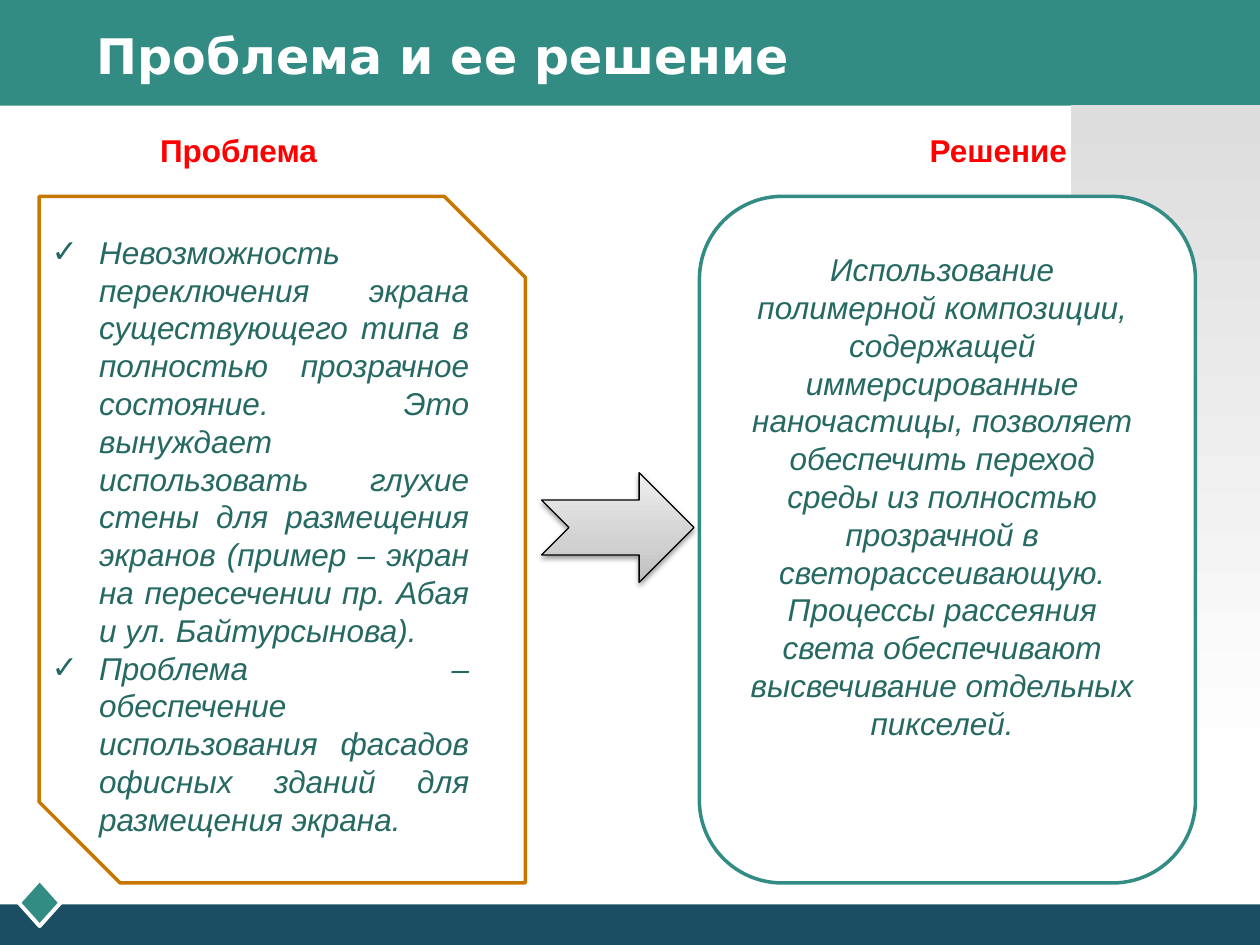
from dataclasses import dataclass

from lxml.etree import SubElement as Sub
from pptx import Presentation
from pptx.dml.color import RGBColor as RGB
from pptx.enum.shapes import MSO_SHAPE as Kind
from pptx.enum.text import MSO_ANCHOR as Anchor, PP_ALIGN as Align
from pptx.oxml.ns import qn
from pptx.util import Cm, Pt


@dataclass(frozen=True)
class Theme:
    teal: str = "328C83"
    navy: str = "1B4E63"
    ink: str = "256962"
    amber: str = "C77600"
    red: str = "FF0000"
    white: str = "FFFFFF"
    black: str = "000000"
    fade: tuple = ((0, "DDDDDD"), (100, "FFFFFF"))
    steel: tuple = ((0, "BDBDBD"), (35, "D1D1D1"), (100, "EEEEEE"))
    font: str = "Arial"
    head: str = "DejaVu Sans"
    big: int = 28
    body: int = 18


def write(par, text, size, color, font, bold=False, slant=False, align=None):
    """Put one formatted run into a paragraph."""
    par.alignment = align
    run = par.add_run()
    run.text = text
    face = run.font
    face.size, face.name = Pt(size), font
    face.bold, face.italic = bold, slant
    face.color.rgb = RGB.from_string(color)


class Deck:
    def __init__(self, theme):
        self.theme = theme
        self.file = Presentation()
        self.file.slide_width, self.file.slide_height = Cm(25.4), Cm(19.05)
        self.slide = self.file.slides.add_slide(self.file.slide_layouts[6])

    def shape(self, kind, box, fill, line=None, width=2):
        item = self.slide.shapes.add_shape(kind, *map(Cm, box))
        item.shadow.inherit = False
        if fill:
            item.fill.solid()
            item.fill.fore_color.rgb = RGB.from_string(fill)
        if line:
            item.line.color.rgb = RGB.from_string(line)
            item.line.width = Pt(width)
        else:
            item.line.fill.background()
        return item

    def blend(self, item, stops, angle):
        """Fill with a gradient; the angle turns anticlockwise."""
        item.fill.gradient()
        item.fill.gradient_angle = angle
        rows = item._element.spPr.find(qn("a:gradFill")).find(qn("a:gsLst"))
        rows.clear()
        for pos, color in stops:
            stop = Sub(rows, qn("a:gs"), pos=str(pos * 1000))
            Sub(stop, qn("a:srgbClr"), val=color)

    def shade(self, item, blur, dist, alpha):
        """Cast a soft shadow straight down."""
        fx = item._element.spPr.find(qn("a:effectLst"))
        cast = Sub(fx, qn("a:outerShdw"), blurRad=str(Pt(blur)),
                   dist=str(Pt(dist)), dir="5400000", rotWithShape="0")
        color = Sub(cast, qn("a:srgbClr"), val=self.theme.black)
        Sub(color, qn("a:alpha"), val=str(alpha * 1000))

    def text(self, box, lines, size, color, font=None, mark=None,
             wrap=True, anchor=Anchor.TOP, **style):
        frame = self.slide.shapes.add_textbox(*map(Cm, box)).text_frame
        frame.word_wrap, frame.vertical_anchor = wrap, anchor
        for i, line in enumerate(lines):
            par = frame.add_paragraph() if i else frame.paragraphs[0]
            write(par, line, size, color, font or self.theme.font, **style)
            if mark:
                self.bullet(par, mark)

    def bullet(self, par, mark, indent=0.96):
        props = par._p.get_or_add_pPr()
        props.set("marL", str(Cm(indent)))
        props.set("indent", str(-Cm(indent)))
        Sub(props, qn("a:buFont"), typeface=self.theme.head)
        Sub(props, qn("a:buChar"), char=mark)


def main():
    look = Theme()
    deck = Deck(look)

    # Frame of the page
    deck.shape(Kind.RECTANGLE, (0, 0, 25.4, 2.13), look.teal)
    deck.shape(Kind.RECTANGLE, (0, 18.23, 25.4, 0.82), look.navy)
    deck.shape(Kind.DIAMOND, (0.38, 17.73, 0.84, 0.94), look.teal,
               look.white, 2.25)
    side = deck.shape(Kind.RECTANGLE, (21.59, 2.11, 3.81, 13.34), None)
    deck.blend(side, look.fade, 270)

    # Title
    deck.text((1.7, 0.33, 22, 1.57), ["Проблема и ее решение"], look.big,
              look.white, look.head, anchor=Anchor.MIDDLE, bold=True)

    # Panels and the arrow between them
    top, high = 3.96, 13.84
    deck.shape(Kind.SNIP_2_DIAG_RECTANGLE, (0.79, top, 9.8, high),
               look.white, look.amber)
    deck.shape(Kind.ROUNDED_RECTANGLE, (14.1, top, 10, high),
               look.white, look.teal)
    arrow = deck.shape(Kind.NOTCHED_RIGHT_ARROW, (10.92, 9.53, 3.07, 2.21),
                       None, look.black, 0.75)
    deck.blend(arrow, look.steel, 90)
    deck.shade(arrow, blur=3.1, dist=1.6, alpha=38)

    # Headings
    deck.text((2.31, 2.51, 5, 1.02), ["Проблема"], look.body, look.red,
              bold=True, align=Align.CENTER)
    deck.text((18.49, 2.51, 3.3, 1.02), ["Решение"], look.body, look.red,
              wrap=False, bold=True)

    # Problem and solution
    deck.text((0.79, 4.57, 8.92, 14.1), [
        "Невозможность переключения экрана существующего типа в полностью "
        "прозрачное состояние. Это вынуждает использовать глухие стены для "
        "размещения экранов (пример – экран на пересечении пр. Абая и "
        "ул. Байтурсынова).",
        "Проблема – обеспечение использования фасадов офисных зданий для "
        "размещения экрана.",
    ], look.body, look.ink, mark="✓", slant=True, align=Align.JUSTIFY)
    deck.text((14.69, 4.92, 8.61, 10.26), [
        "Использование полимерной композиции, содержащей иммерсированные "
        "наночастицы, позволяет обеспечить переход среды из полностью "
        "прозрачной в светорассеивающую.",
        "Процессы рассеяния света обеспечивают высвечивание отдельных "
        "пикселей.",
    ], look.body, look.ink, slant=True, align=Align.CENTER)

    deck.file.save("out.pptx")


if __name__ == "__main__":
    main()
